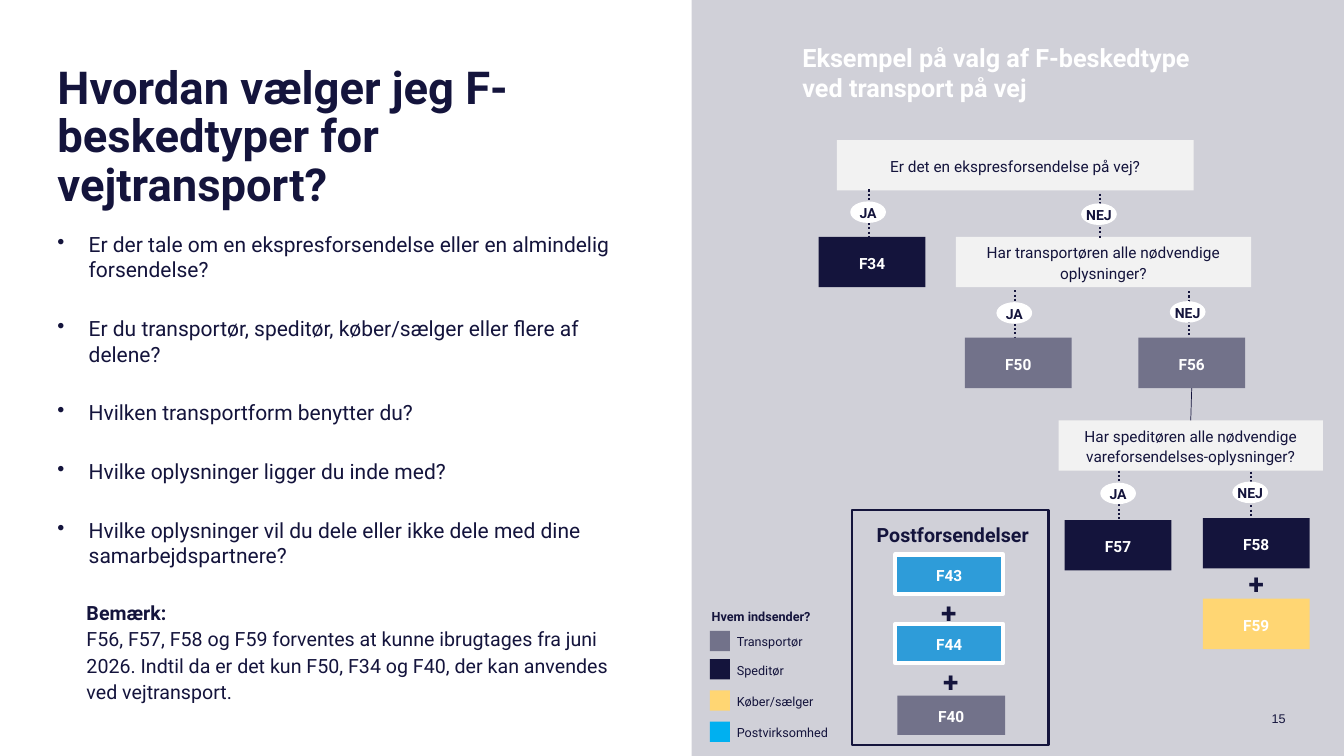
"""Builds the slide on choosing F message types for road transport."""
from dataclasses import dataclass

from lxml.etree import SubElement as Sub
from pptx import Presentation
from pptx.dml.color import RGBColor as Rgb
from pptx.enum.dml import MSO_LINE as Dash
from pptx.enum.shapes import MSO_CONNECTOR as Link, MSO_SHAPE as Shape
from pptx.enum.text import MSO_ANCHOR as Anchor, PP_ALIGN as Align
from pptx.oxml.ns import qn
from pptx.util import Inches, Pt


@dataclass(frozen=True)
class Theme:
    font: str = "Roboto"
    plain: str = "Arial"
    navy: str = "14143C"
    slate: str = "72728A"
    panel: str = "D0D0D8"
    pale: str = "F2F2F2"
    white: str = "FFFFFF"
    gold: str = "FFD673"
    blue: str = "2E9CD9"
    sky: str = "00B0F0"
    title: float = 32.4
    plus: int = 20
    head: int = 18
    body: int = 15
    note: int = 14
    box: int = 11
    badge: int = 10
    small: int = 9


T = Theme()


def write(shape, lines, size, color=T.navy, bold=False, align=Align.LEFT,
          anchor=Anchor.TOP, space=1.11, inset=True, wrap=True, font=T.font):
    """Put styled lines in a shape; return its paragraphs."""
    frame = shape.text_frame
    frame.word_wrap = wrap
    frame.vertical_anchor = anchor
    if not inset:
        frame.margin_left = frame.margin_right = 0
        frame.margin_top = frame.margin_bottom = 0
    frame.text = "\n".join(lines)
    for para in frame.paragraphs:
        para.alignment = align
        if space:
            para.line_spacing = space
        para.font.name = font
        para.font.size = Pt(size)
        para.font.bold = bold
        para.font.color.rgb = Rgb.from_string(color)
    return frame.paragraphs


def text(slide, spot, lines, size, **style):
    """Add a text box."""
    area = slide.shapes.add_textbox(*map(Inches, spot))
    return write(area, lines, size, **style)


def block(slide, spot, fill=None, edge=None, width=1, kind=Shape.RECTANGLE):
    """Add a flat preset shape."""
    shape = slide.shapes.add_shape(kind, *map(Inches, spot))
    shape.shadow.inherit = False
    if fill:
        shape.fill.solid()
        shape.fill.fore_color.rgb = Rgb.from_string(fill)
    else:
        shape.fill.background()
    if edge:
        shape.line.color.rgb = Rgb.from_string(edge)
        shape.line.width = Pt(width)
    else:
        shape.line.fill.background()
    return shape


def tile(slide, label, x, y, fill, w=1.06, h=0.5, edge=None):
    """Add a coloured message type tile."""
    shape = block(slide, (x, y, w, h), fill, edge, 3)
    write(shape, [label], T.box, color=T.white, bold=True,
          align=Align.CENTER, anchor=Anchor.MIDDLE)


def query(slide, label, x, y, w):
    """Add a pale question box."""
    shape = block(slide, (x, y, w, 0.5), T.pale)
    write(shape, [label], T.box, align=Align.CENTER, anchor=Anchor.MIDDLE)


def line(slide, ends, width, dash=None):
    """Add a navy line."""
    link = slide.shapes.add_connector(Link.STRAIGHT, *map(Inches, ends))
    link.line.color.rgb = Rgb.from_string(T.navy)
    link.line.width = Pt(width)
    if dash:
        link.line.dash_style = dash
    Sub(link._element.spPr, qn("a:effectLst"))


def branch(slide, label, x, y, drop):
    """Add a dotted line with an answer badge near its middle."""
    line(slide, (x, y, x, y + drop), 1.5, Dash.ROUND_DOT)
    spot = (x - 0.18, y + drop / 2 - 0.12, 0.34, 0.2)
    badge = block(slide, spot, T.white, T.white, kind=Shape.OVAL)
    write(badge, [label], T.badge, bold=True, align=Align.CENTER,
          anchor=Anchor.MIDDLE, inset=False, wrap=False)


def plus(slide, x, y):
    """Add a plus sign between two tiles."""
    text(slide, (x, y, 0.5, 0.34), ["+"], T.plus, bold=True,
         align=Align.CENTER, inset=False)


def points(slide, spot, lines):
    """Add a bulleted list."""
    area = slide.shapes.add_textbox(*map(Inches, spot))
    area.text_frame.text = "\n".join(lines)
    for para in write(area, lines, T.body, space=None, inset=False):
        props = para._p.get_or_add_pPr()
        props.set("marL", str(Inches(0.31)))
        props.set("indent", str(-Inches(0.31)))
        mark = Sub(props, qn("a:buChar"), char="•")
        props.insert(0, mark)
        para.space_after = Pt(24)


def legend(slide):
    """Add the key of who submits each message."""
    text(slide, (6.96, 5.96, 1.81, 0.29), ["Hvem indsender?"], T.small,
         bold=True, anchor=Anchor.MIDDLE)
    for label, fill, y in (("Transportør", T.slate, 6.26),
                           ("Speditør", T.navy, 6.54),
                           ("Køber/sælger", T.gold, 6.85),
                           ("Postvirksomhed", T.sky, 7.16)):
        block(slide, (7.04, y, 0.2, 0.2), fill)
        text(slide, (7.21, y - 0.04, 1.5, 0.28), [label], T.small,
             anchor=Anchor.MIDDLE)


def postal(slide):
    """Add the framed group for postal items."""
    block(slide, (8.45, 5.06, 1.95, 2.33), edge=T.navy, width=1.5)
    text(slide, (8.64, 5.16, 1.62, 0.24), ["Postforsendelser"], T.note,
         bold=True, align=Align.CENTER, inset=False, wrap=False)
    tile(slide, "F40", 8.9, 6.9, T.slate, 1.07, 0.39)
    for label, y in (("F43", 5.5), ("F44", 6.19)):
        tile(slide, label, 8.88, y, T.blue, 1.07, 0.39, T.white)
    plus(slide, 9.16, 5.87)
    plus(slide, 9.18, 6.56)


def chart(slide):
    """Add the decision tree."""
    for label, x, y, w in (
            ("Er det en ekspresforsendelse på vej?", 8.3, 1.39, 3.54),
            ("Har transportøren alle nødvendige oplysninger?",
             9.48, 2.35, 2.93),
            ("Har speditøren alle nødvendige vareforsendelses-oplysninger?",
             10.5, 4.17, 2.62)):
        query(slide, label, x, y, w)
    for x, y in ((8.62, 1.88), (10.07, 2.88), (11.1, 4.67)):
        branch(slide, "JA", x, y, 0.49)
    for x, y in ((10.91, 1.92), (11.79, 2.89), (12.41, 4.68)):
        branch(slide, "NEJ", x, y, 0.45)
    for label, x, y, fill in (("F34", 8.12, 2.35, T.navy),
                              ("F50", 9.57, 3.35, T.slate),
                              ("F56", 11.29, 3.35, T.slate),
                              ("F57", 10.56, 5.16, T.navy),
                              ("F58", 11.93, 5.14, T.navy),
                              ("F59", 11.93, 5.94, T.gold)):
        tile(slide, label, x, y, fill)
    plus(slide, 12.21, 5.58)
    line(slide, (11.82, 3.85, 11.81, 4.17), 0.5)


def main():
    """Build and save the slide."""
    deck = Presentation()
    deck.slide_width, deck.slide_height = Inches(13.33), Inches(7.5)
    slide = deck.slides.add_slide(deck.slide_layouts[6])
    block(slide, (6.86, 0, 6.47, 7.5), T.panel)
    text(slide, (0.57, 0.65, 6.64, 1.45),
         ["Hvordan vælger jeg F- beskedtyper for\vvejtransport?"],
         T.title, bold=True, space=0.89, inset=False)
    points(slide, (0.57, 2.3, 5.9, 3.53), [
        "Er der tale om en ekspresforsendelse eller en almindelig forsendelse?",
        "Er du transportør, speditør, køber/sælger eller flere af delene?",
        "Hvilken transportform benytter du?",
        "Hvilke oplysninger ligger du inde med?",
        "Hvilke oplysninger vil du dele eller ikke dele med dine "
        "samarbejdspartnere?"])
    note = text(slide, (0.76, 5.89, 5.54, 1.11), [
        "Bemærk:",
        "F56, F57, F58 og F59 forventes at kunne ibrugtages fra juni 2026. "
        "Indtil da er det kun F50, F34 og F40, der kan anvendes ved "
        "vejtransport."], T.note)
    note[0].font.bold = True
    text(slide, (7.86, 0.65, 4.35, 0.14),
         ["Eksempel på valg af F-beskedtype", "ved transport på vej"],
         T.head, color=T.white, bold=True, anchor=Anchor.MIDDLE, space=None)
    chart(slide)
    postal(slide)
    legend(slide)
    text(slide, (11.05, 7.02, 1.7, 0.18), ["15"], T.small, align=Align.RIGHT,
         anchor=Anchor.BOTTOM, space=None, inset=False, font=T.plain)
    deck.save("out.pptx")


if __name__ == "__main__":
    main()
